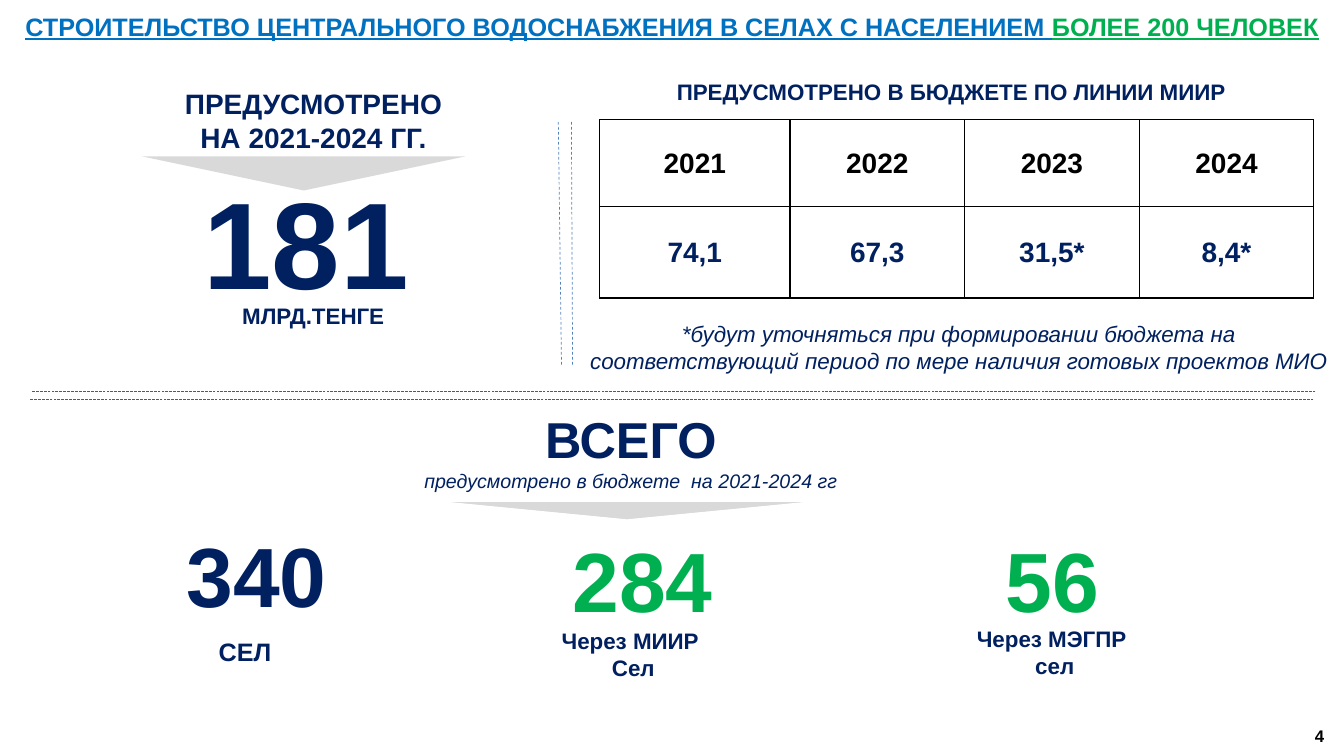
from lxml import etree
from pptx import Presentation
from pptx.dml.color import RGBColor
from pptx.enum.dml import MSO_LINE
from pptx.enum.shapes import MSO_CONNECTOR, MSO_SHAPE
from pptx.enum.text import MSO_ANCHOR, PP_ALIGN
from pptx.oxml.ns import qn
from pptx.util import Cm, Pt

NAVY = RGBColor(0x00, 0x20, 0x60)
GREEN = RGBColor(0x00, 0xB0, 0x50)
BLUE = RGBColor(0x00, 0x70, 0xC0)
SKY = RGBColor(0x4F, 0x81, 0xBD)
STEEL = RGBColor(0x37, 0x60, 0x92)
GREY = RGBColor(0xD9, 0xD9, 0xD9)
BLACK = RGBColor(0, 0, 0)
WHITE = RGBColor(0xFF, 0xFF, 0xFF)
FONT = "Arial"
MID, TOP = MSO_ANCHOR.MIDDLE, MSO_ANCHOR.TOP
LEFT, CENTER = PP_ALIGN.LEFT, PP_ALIGN.CENTER
RECT, TRIANGLE = MSO_SHAPE.RECTANGLE, MSO_SHAPE.ISOSCELES_TRIANGLE
STRAIGHT = MSO_CONNECTOR.STRAIGHT
DASH, LONG = MSO_LINE.DASH, MSO_LINE.LONG_DASH

# Content: a text is a list of paragraphs, a paragraph a list of (words, format) runs.
TITLE = [[("СТРОИТЕЛЬСТВО ЦЕНТРАЛЬНОГО ВОДОСНАБЖЕНИЯ В СЕЛАХ С НАСЕЛЕНИЕМ ", {"color": BLUE}),
          ("БОЛЕЕ 200 ЧЕЛОВЕК", {"color": GREEN})]]
PLAN = ["ПРЕДУСМОТРЕНО", "НА 2021-2024 ГГ."]
SUM, UNIT = ["181"], ["МЛРД.ТЕНГЕ"]
HEAD = ["ПРЕДУСМОТРЕНО В БЮДЖЕТЕ ПО ЛИНИИ МИИР"]
BUDGET = [["2021", "2022", "2023", "2024"],
          ["74,1", "67,3", "31,5*", "8,4*"]]
NOTE = ["*будут уточняться при формировании бюджета на "
        "соответствующий период по мере наличия готовых проектов МИО"]
TOTAL = [[("ВСЕГО", {"size": 36})],
         [("предусмотрено в бюджете  на 2021-2024 гг",
           {"size": 14, "bold": False, "italic": True})]]
COUNTS = [("340", NAVY, 2.67, 13.06), ("284", GREEN, 12.4, 13.18), ("56", GREEN, 22.73, 13.18)]
SHARES = [(["Через МИИР ", "Сел"], 12.19, 15.67), (["Через МЭГПР ", "сел"], 22.81, 15.62)]
VILLAGES, PAGE = ["СЕЛ"], ["4"]

# Geometry in centimetres
WIDTH, HEIGHT = 33.87, 19.05
COLS, ROWS = [4.8, 4.4, 4.4, 4.4], [2.18, 2.31]
ARROWS = [(3.58, 3.94, 8.15, 0.86), (11.38, 12.65, 8.84, 0.43)]
RULES = [(14.07, 3.07, 14.15, 9.19, SKY, 0.5, DASH),
         (14.4, 3.07, 14.43, 9.19, SKY, 0.5, DASH),
         (33.15, 9.86, 0.79, 9.86, STEEL, 0.25, LONG),
         (33.1, 10.06, 0.74, 10.06, STEEL, 0.25, LONG)]
PAD, SLIM, WIDE = (0.25, 0.13), (0.18, 0.1), (0.33, 0.18)

prs = Presentation()
prs.slide_width, prs.slide_height = Cm(WIDTH), Cm(HEIGHT)
slide = prs.slides.add_slide(prs.slide_layouts[6])
shapes = slide.shapes


def write(frame, paras, align=CENTER, **base):
    """Fill a text frame; a run's own format overrides the base format."""
    for i, para in enumerate(paras):
        p = frame.paragraphs[0] if i == 0 else frame.add_paragraph()
        p.alignment = align
        for words, own in [(para, {})] if isinstance(para, str) else para:
            fmt = {"size": 16, "color": NAVY, "bold": True, **base, **own}
            run = p.add_run()
            run.text = words
            font = run.font
            font.name, font.size = FONT, Pt(fmt["size"])
            font.color.rgb = fmt["color"]
            font.bold = fmt["bold"]
            font.italic = fmt.get("italic")
            font.underline = fmt.get("line")


def text(paras, x, y, w, h, panel=False, pad=PAD, anchor=TOP, wrap=True, **fmt):
    """Place text in a text box, or on a white panel."""
    area = Cm(x), Cm(y), Cm(w), Cm(h)
    if panel:
        box = shapes.add_shape(RECT, *area)
        box.shadow.inherit = False
        box.fill.solid()
        box.fill.fore_color.rgb = WHITE
        box.line.color.rgb = WHITE
        box.line.width = Pt(0.75)
    else:
        box = shapes.add_textbox(*area)
    frame = box.text_frame
    frame.word_wrap = wrap
    frame.vertical_anchor = anchor
    frame.margin_left = frame.margin_right = Cm(pad[0])
    frame.margin_top = frame.margin_bottom = Cm(pad[1])
    write(frame, paras, **fmt)


def arrow(x, y, w, h):
    mark = shapes.add_shape(TRIANGLE, Cm(x), Cm(y), Cm(w), Cm(h))
    mark.rotation = 180
    mark.shadow.inherit = False
    mark.fill.solid()
    mark.fill.fore_color.rgb = GREY
    mark.line.fill.background()


def rule(x1, y1, x2, y2, color, width, dash):
    line = shapes.add_connector(STRAIGHT, Cm(x1), Cm(y1), Cm(x2), Cm(y2))
    line.line.color.rgb = color
    line.line.width = Pt(width)
    line.line.dash_style = dash
    etree.SubElement(line._element.spPr, qn("a:effectLst"))


def border(cell):
    props = cell._tc.get_or_add_tcPr()
    for i, side in enumerate(("lnL", "lnR", "lnT", "lnB")):
        edge = etree.Element(qn("a:" + side), w=str(Pt(1)))
        fill = etree.SubElement(edge, qn("a:solidFill"))
        etree.SubElement(fill, qn("a:srgbClr"), val=str(BLACK))
        props.insert(i, edge)


def table(x, y):
    grid = shapes.add_table(len(ROWS), len(COLS), Cm(x), Cm(y),
                            Cm(sum(COLS)), Cm(sum(ROWS))).table
    for col, w in zip(grid.columns, COLS):
        col.width = Cm(w)
    for r, (h, values) in enumerate(zip(ROWS, BUDGET)):
        grid.rows[r].height = Cm(h)
        for c, value in enumerate(values):
            cell = grid.cell(r, c)
            cell.fill.solid()
            cell.fill.fore_color.rgb = WHITE
            cell.vertical_anchor = MID
            cell.margin_left = cell.margin_right = cell.margin_top = Cm(0.03)
            cell.margin_bottom = 0
            write(cell.text_frame, [value], size=20, color=NAVY if r else BLACK)
            border(cell)


text(TITLE, 0, 0, WIDTH, 1.32, panel=True, pad=WIDE, anchor=MID, size=18, line=True)
text(PLAN, 2.67, 2.08, 10.46, 1.9, pad=SLIM, size=20)
for place in ARROWS:
    arrow(*place)
text(SUM, 3.33, 4.06, 8.76, 4.01, size=88)
text(UNIT, 4.11, 7.52, 7.57, 0.89, pad=SLIM)
for stroke in RULES:
    rule(*stroke)

text(HEAD, 16.48, 1.83, 14.99, 0.94, panel=True)
table(15.11, 3.02)
text(NOTE, 14.45, 7.95, 19.43, 1.63, panel=True, bold=False, italic=True)

text(TOTAL, 10.39, 10.16, 11.02, 2.39, panel=True)
arrow(*ARROWS[1])
for number, color, x, y in COUNTS:
    text([number], x, y, 7.59, 2.82, size=60, color=color)
for label, x, y in SHARES:
    text(label, x, y, 7.54, 1.63, panel=True)
text(VILLAGES, 5.26, 15.9, 1.85, 1.02, wrap=False, align=LEFT, size=18)
text(PAGE, 32.89, 18.16, 0.74, 0.76, wrap=False, align=LEFT, size=12, color=BLACK)

prs.save("out.pptx")
